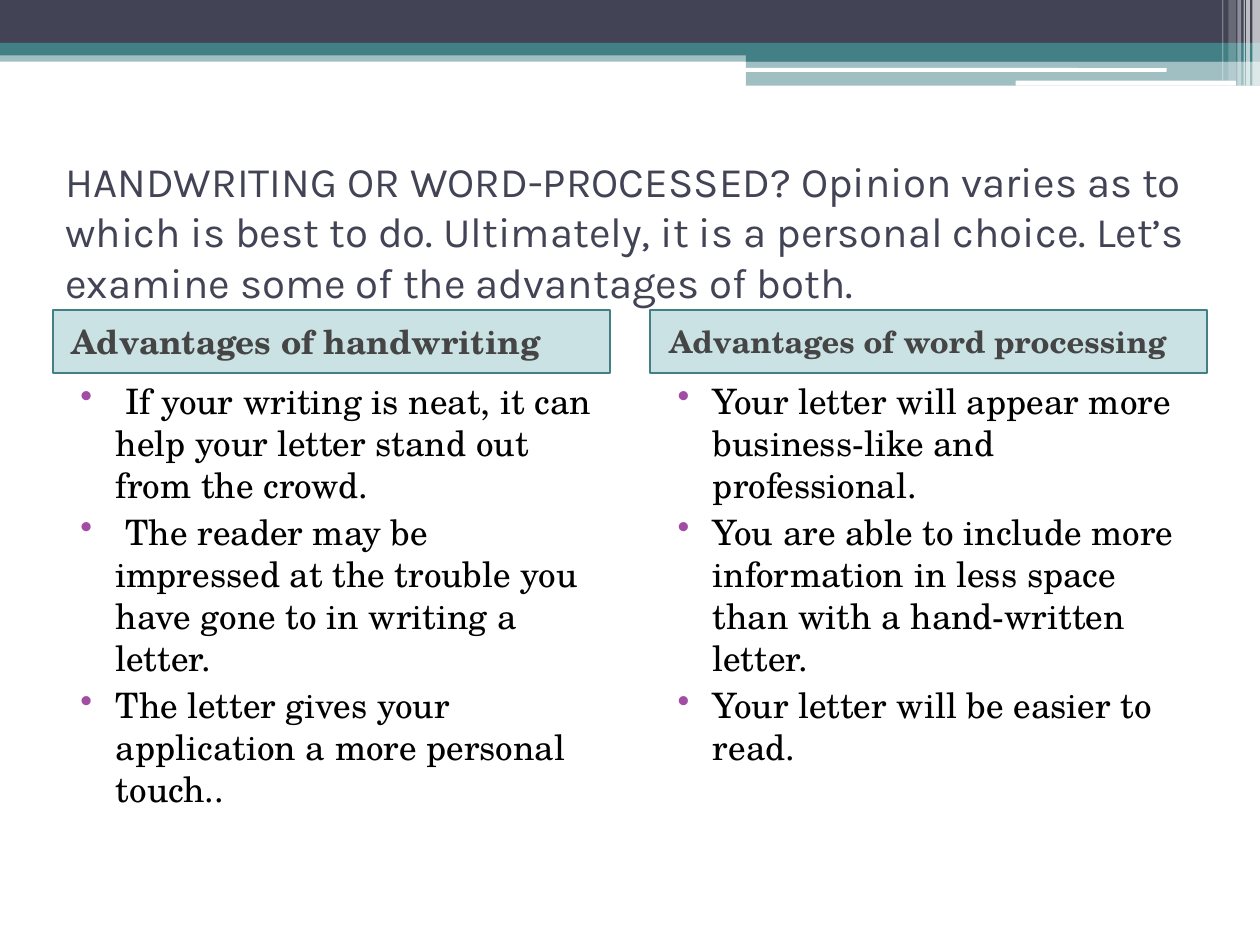
from pptx import Presentation
from pptx.dml.color import RGBColor
from pptx.enum.shapes import MSO_SHAPE
from pptx.enum.text import MSO_ANCHOR, PP_ALIGN
from pptx.oxml.ns import qn
from pptx.util import Inches, Pt
from lxml.etree import SubElement

NAVY, TEAL, WHITE = "424456", "438086", "FFFFFF"
SERIF = "TeX Gyre Schola"

BANDS = [
    (0, 0.4, 10, 0.09, TEAL, 50),
    (0, 0, 10, 0.34, NAVY, 100),
    (0, 0.34, 10, 0.1, TEAL, 100),
    (5.92, 0.39, 4.08, 0.1, TEAL, 100),
    (5.92, 0.48, 4.08, 0.2, TEAL, 50),
]
HIGHLIGHTS = [(5.91, 0.54, 3.35, 0.03), (8.06, 0.64, 1.75, 0.04)]
STRIPES = [
    (9.94, 0.06, 0.68, 65),
    (9.89, 0.03, 0.68, 65),
    (9.87, 0.01, 0.68, 60),
    (9.82, 0.03, 0.68, 40),
    (9.75, 0.06, 0.64, 20),
    (9.7, 0.01, 0.64, 30),
]
TITLE = (
    "HANDWRITING OR WORD-PROCESSED? Opinion varies as to which is best to do. "
    "Ultimately, it is a personal choice. Let’s examine some of the advantages of both."
)
COLUMNS = [
    ("Advantages of handwriting", 19, [
        " If your writing is neat, it can help your letter stand out from the crowd.",
        " The reader may be impressed at the trouble you have gone to in writing a letter.",
        "The letter gives your application a more personal touch..",
    ]),
    ("Advantages of word processing", 17.6, [
        "Your letter will appear more business-like and professional.",
        "You are able to include more information in less space than with a hand-written letter.",
        "Your letter will be easier to read.",
    ]),
]


def paint(color_format, hex_color):
    color_format.rgb = RGBColor.from_string(hex_color)


def set_values(target, values):
    for name, value in values.items():
        setattr(target, name, value)


def add_panel(slide, box, color, opacity=100, preset=MSO_SHAPE.RECTANGLE):
    panel = slide.shapes.add_shape(preset, *map(Inches, box))
    panel.shadow.inherit = False
    panel.line.fill.background()
    panel.fill.solid()
    paint(panel.fill.fore_color, color)
    if opacity < 100:
        tint = panel.fill._xPr.find(qn("a:solidFill"))[0]
        SubElement(tint, qn("a:alpha"), val=str(opacity * 1000))
    return panel


def write_paragraph(paragraph, text, color, font, spacing):
    set_values(paragraph, {"alignment": PP_ALIGN.LEFT, **spacing})
    run = paragraph.add_run()
    run.text = text
    set_values(run.font, font)
    paint(run.font.color, color)


def add_bullet(paragraph, color):
    properties = paragraph._p.get_or_add_pPr()
    properties.set("marL", str(Inches(0.4)))
    properties.set("indent", str(Inches(-0.28)))
    bullet_color = SubElement(properties, qn("a:buClr"))
    SubElement(bullet_color, qn("a:srgbClr"), val=color)
    SubElement(properties, qn("a:buChar"), char="•")


def add_banner(slide, left, top):
    for x, y, width, height, color, opacity in BANDS:
        add_panel(slide, (left + x, top + y, width, height), color, opacity)
    for x, y, width, height in HIGHLIGHTS:
        add_panel(slide, (left + x, top + y, width, height), WHITE,
                  preset=MSO_SHAPE.ROUNDED_RECTANGLE)
    for x, width, height, opacity in STRIPES:
        add_panel(slide, (left + x, top, width, height), WHITE, opacity)


def add_title(slide, box):
    frame = slide.shapes.add_textbox(*map(Inches, box)).text_frame
    set_values(frame, {"word_wrap": True, "vertical_anchor": MSO_ANCHOR.MIDDLE})
    write_paragraph(frame.paragraphs[0], TITLE, NAVY,
                    {"name": "Karla", "size": Pt(24)}, {})


def add_heading(slide, box, heading, size):
    panel = add_panel(slide, box, "328E97", 25)
    paint(panel.line.color, TEAL)
    panel.line.width = Pt(1)
    frame = panel.text_frame
    set_values(frame, {"word_wrap": True, "vertical_anchor": MSO_ANCHOR.MIDDLE,
                       "margin_left": Inches(0.15)})
    write_paragraph(frame.paragraphs[0], heading, "454545",
                    {"name": SERIF, "size": Pt(size), "bold": True},
                    {"space_before": Pt(3)})


def add_advantages(slide, box, advantages):
    frame = slide.shapes.add_textbox(*map(Inches, box)).text_frame
    frame.word_wrap = True
    for index, advantage in enumerate(advantages):
        paragraph = frame.add_paragraph() if index else frame.paragraphs[0]
        write_paragraph(paragraph, advantage, "000000",
                        {"name": SERIF, "size": Pt(20)}, {"space_before": Pt(3)})
        add_bullet(paragraph, "A04DA3")


def add_comparison(slide, left, top, width, height):
    gap, heading_height = 0.32, 0.5
    column_width = (width - gap) / 2
    for index, (heading, size, advantages) in enumerate(COLUMNS):
        x = left + index * (column_width + gap)
        add_heading(slide, (x, top, column_width, heading_height), heading, size)
        add_advantages(slide, (x, top + heading_height, column_width,
                               height - heading_height), advantages)


def main():
    presentation = Presentation()
    set_values(presentation, {"slide_width": Inches(10), "slide_height": Inches(7.5)})
    slide = presentation.slides.add_slide(presentation.slide_layouts[6])
    add_banner(slide, 0, 0)
    add_title(slide, (0.42, 1.25, 9.17, 1.17))
    add_comparison(slide, 0.42, 2.46, 9.16, 4.75)
    presentation.save("out.pptx")


if __name__ == "__main__":
    main()
